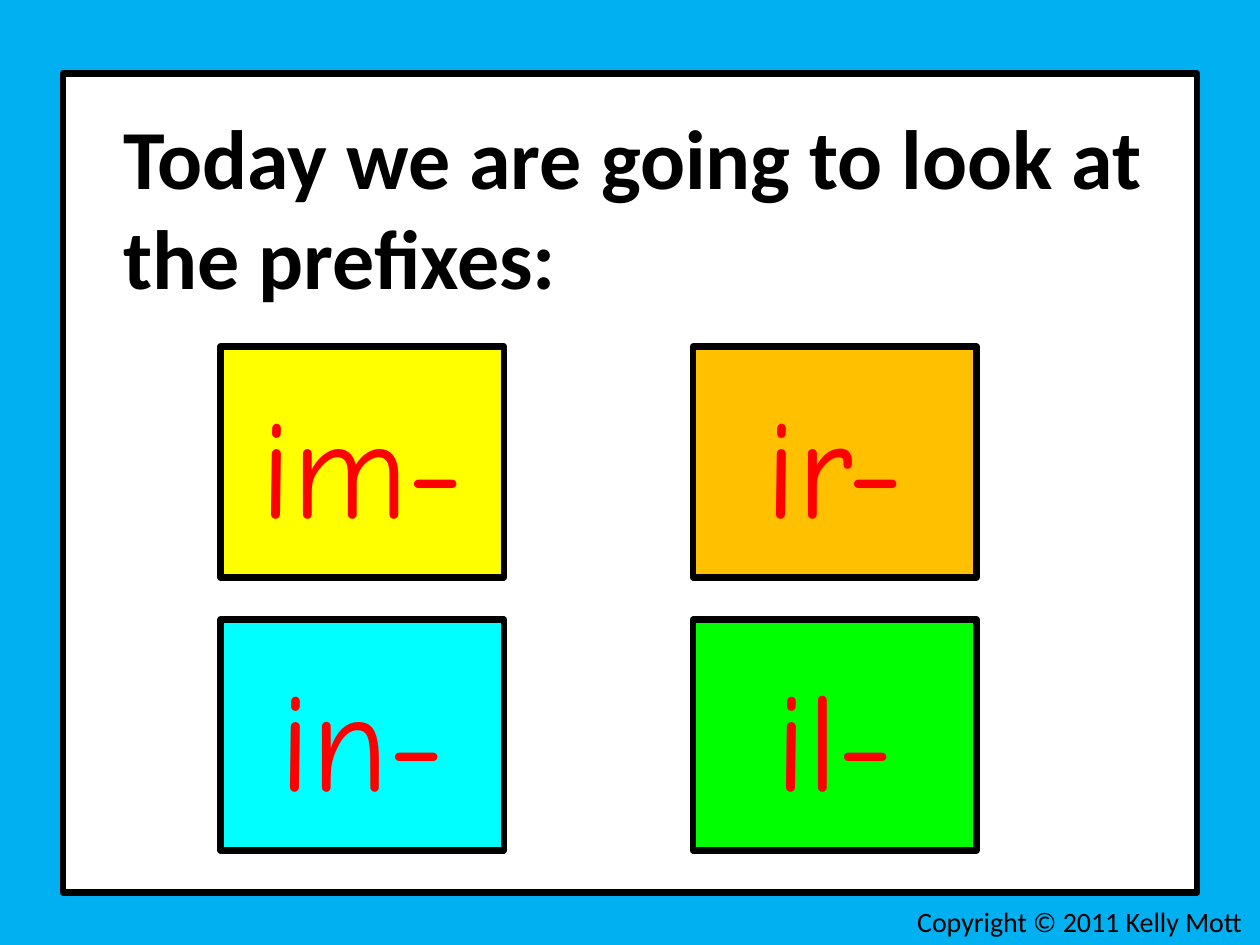
from dataclasses import dataclass

from pptx import Presentation
from pptx.dml.color import RGBColor
from pptx.enum.shapes import MSO_SHAPE
from pptx.enum.text import MSO_ANCHOR, MSO_AUTO_SIZE, PP_ALIGN
from pptx.util import Pt

RECTANGLE = MSO_SHAPE.RECTANGLE
TOP, MIDDLE = MSO_ANCHOR.TOP, MSO_ANCHOR.MIDDLE
LEFT, CENTER = PP_ALIGN.LEFT, PP_ALIGN.CENTER
NO_AUTOFIT, GROW_BOX = MSO_AUTO_SIZE.NONE, MSO_AUTO_SIZE.SHAPE_TO_FIT_TEXT
TITLE_ONLY = 5


@dataclass(frozen=True)
class Theme:
    background: str = "00B0F0"
    panel: str = "FFFFFF"
    ink: str = "000000"
    prefix: str = "FF0000"
    yellow: str = "FFFF00"
    orange: str = "FFC000"
    cyan: str = "00FFFF"
    green: str = "00FF00"
    text_font: str = "Calibri"
    prefix_font: str = "Comic Neue"
    title_size: float = 48
    prefix_size: float = 80
    credit_size: float = 16
    panel_line: float = 3.75
    card_line: float = 3.5


class PageBuilder:
    """Draws styled elements on one page; all lengths are in points."""

    def __init__(self, page, theme):
        self.page = page
        self.theme = theme
        self.paint(page.background, theme.background)

    def paint(self, item, color):
        item.fill.solid()
        item.fill.fore_color.rgb = RGBColor.from_string(color)

    def outline(self, shape, width):
        shape.line.color.rgb = RGBColor.from_string(self.theme.ink)
        shape.line.width = Pt(width)

    def set_text(self, shape, text, font, size, color, align=LEFT, bold=False):
        para = shape.text_frame.paragraphs[0]
        para.text = text
        para.alignment = align
        para.font.name = font
        para.font.size = Pt(size)
        para.font.bold = bold
        para.font.color.rgb = RGBColor.from_string(color)

    def title_panel(self, text, left, top, width, height):
        """Turns the title placeholder into the large framed panel."""
        theme = self.theme
        panel = self.page.shapes.title
        panel.left, panel.top = Pt(left), Pt(top)
        panel.width, panel.height = Pt(width), Pt(height)
        self.paint(panel, theme.panel)
        self.outline(panel, theme.panel_line)
        frame = panel.text_frame
        frame.auto_size = NO_AUTOFIT
        frame.word_wrap = True
        frame.vertical_anchor = TOP
        frame.margin_left, frame.margin_top = Pt(34.5), Pt(18)
        self.set_text(panel, text, theme.text_font, theme.title_size,
                      theme.ink, bold=True)

    def prefix_card(self, text, color, left, top, width, height):
        theme = self.theme
        card = self.page.shapes.add_shape(
            RECTANGLE, Pt(left), Pt(top), Pt(width), Pt(height))
        card.shadow.inherit = False
        self.paint(card, color)
        self.outline(card, theme.card_line)
        card.text_frame.vertical_anchor = MIDDLE
        self.set_text(card, text, theme.prefix_font, theme.prefix_size,
                      theme.prefix, CENTER)

    def credit(self, text, left, top, width, height):
        theme = self.theme
        box = self.page.shapes.add_textbox(
            Pt(left), Pt(top), Pt(width), Pt(height))
        box.text_frame.word_wrap = False
        box.text_frame.auto_size = GROW_BOX
        self.set_text(box, text, theme.text_font, theme.credit_size, theme.ink)


def main():
    deck = Presentation()
    deck.slide_width, deck.slide_height = Pt(720), Pt(540)
    theme = Theme()
    page = deck.slides.add_slide(deck.slide_layouts[TITLE_ONLY])
    builder = PageBuilder(page, theme)

    builder.title_panel("Today we are going to look at the prefixes:",
                        36, 42, 648, 468)

    card_rows = [
        [("im-", theme.yellow), ("ir-", theme.orange)],
        [("in-", theme.cyan), ("il-", theme.green)],
    ]
    for row, cards in enumerate(card_rows):
        for column, (prefix, color) in enumerate(cards):
            builder.prefix_card(prefix, color, 126 + 270 * column,
                                198 + 156 * row, 162, 132)

    builder.credit("Copyright © 2011 Kelly Mott", 517, 513.3, 203, 26.7)
    deck.save("out.pptx")


if __name__ == "__main__":
    main()
